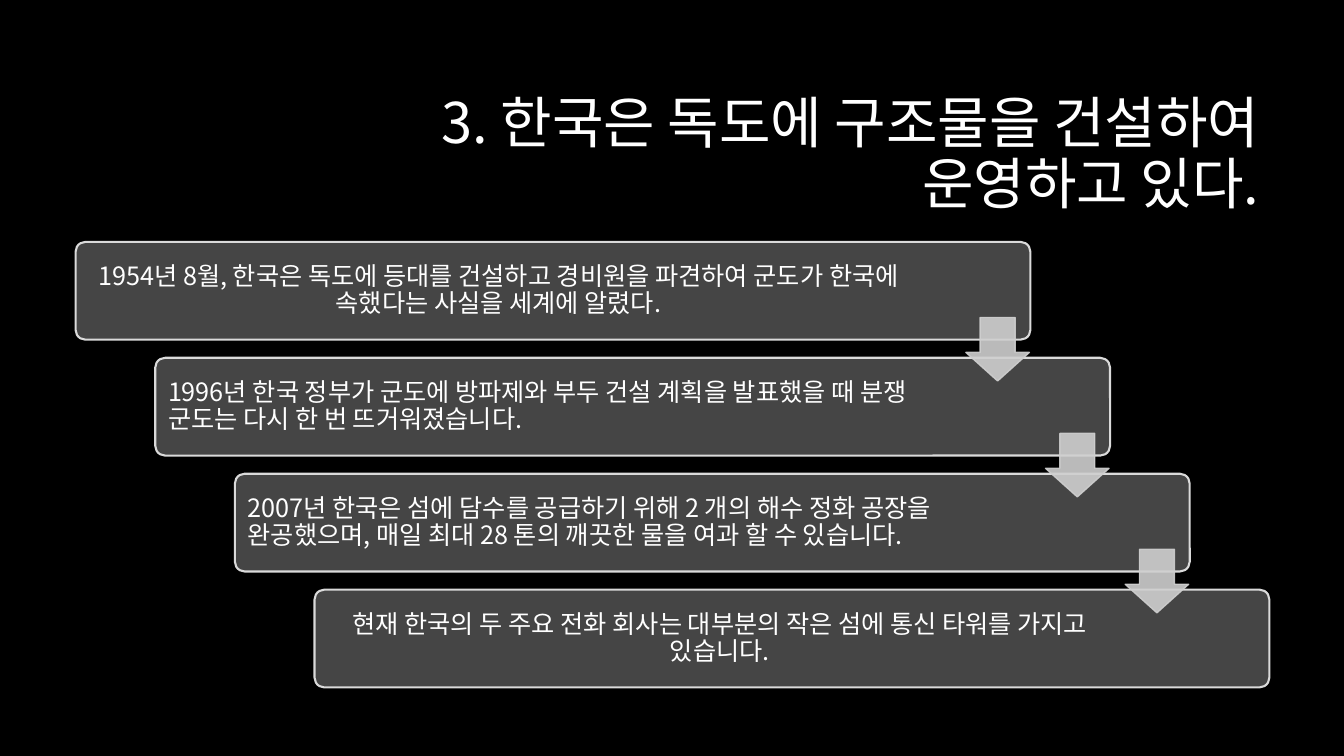
from dataclasses import dataclass

from lxml.etree import SubElement
from pptx import Presentation
from pptx.dml.color import RGBColor
from pptx.enum.shapes import MSO_SHAPE
from pptx.enum.text import MSO_ANCHOR, MSO_AUTO_SIZE, PP_ALIGN
from pptx.oxml.ns import qn
from pptx.shapes.autoshape import Shape
from pptx.slide import Slide
from pptx.util import Inches, Pt

FONT = "Noto Sans CJK KR"
FIRST_LEFT, FIRST_TOP = 0.75, 2.4
STEP_RIGHT, STEP_DOWN = 0.79, 1.15
CARD_WIDTH, CARD_HEIGHT = 9.47, 0.97
CARD_PADDING = 0.1
ARROW_SIZE = 0.63
ARROW_RIGHT, ARROW_DOWN = 8.83, 0.75


@dataclass(frozen=True)
class Event:
    text: str
    text_width: float
    align: PP_ALIGN


EVENTS = [
    Event("1954년 8월, 한국은 독도에 등대를 건설하고 경비원을 파견하여 군도가 한국에 속했다는 사실을 세계에 알렸다.",
          8.33, PP_ALIGN.CENTER),
    Event("1996년 한국 정부가 군도에 방파제와 부두 건설 계획을 발표했을 때 분쟁 군도는 다시 한 번 뜨거워졌습니다.",
          7.98, PP_ALIGN.LEFT),
    Event("2007년 한국은 섬에 담수를 공급하기 위해 2 개의 해수 정화 공장을 완공했으며, "
          "매일 최대 28 톤의 깨끗한 물을 여과 할 수 있습니다.",
          8.0, PP_ALIGN.LEFT),
    Event("현재 한국의 두 주요 전화 회사는 대부분의 작은 섬에 통신 타워를 가지고 있습니다.",
          7.98, PP_ALIGN.CENTER),
]


def color(value: str) -> RGBColor:
    return RGBColor.from_string(value)


def write(shape: Shape, text: str, size: float, align: PP_ALIGN, frame_format: dict) -> None:
    frame = shape.text_frame
    frame.text = text
    common = {"word_wrap": True, "auto_size": MSO_AUTO_SIZE.NONE,
              "vertical_anchor": MSO_ANCHOR.MIDDLE}
    for name, value in (common | frame_format).items():
        setattr(frame, name, value)
    paragraph = frame.paragraphs[0]
    for name, value in {"alignment": align, "line_spacing": 0.9}.items():
        setattr(paragraph, name, value)
    font = paragraph.runs[0].font
    for name, value in {"name": FONT, "size": Pt(size)}.items():
        setattr(font, name, value)
    font.color.rgb = color("FFFFFF")
    SubElement(font._element, qn("a:ea")).set("typeface", FONT)


def add_panel(slide: Slide, kind: MSO_SHAPE, left: float, top: float, width: float, height: float,
              adjustments: list[float], fill: str, line: str, line_width: float) -> Shape:
    panel = slide.shapes.add_shape(kind, Inches(left), Inches(top), Inches(width), Inches(height))
    panel.shadow.inherit = False
    for index, value in enumerate(adjustments):
        panel.adjustments[index] = value
    panel.fill.solid()
    panel.fill.fore_color.rgb = color(fill)
    panel.line.color.rgb = color(line)
    panel.line.width = Pt(line_width)
    return panel


def add_event(slide: Slide, event: Event, step: int) -> None:
    card = add_panel(slide, MSO_SHAPE.ROUNDED_RECTANGLE,
                     FIRST_LEFT + step * STEP_RIGHT, FIRST_TOP + step * STEP_DOWN,
                     CARD_WIDTH, CARD_HEIGHT, [0.1], "454545", "DADADA", 1.5)
    write(card, event.text, 18, event.align, {
        "margin_left": Inches(CARD_PADDING),
        "margin_right": Inches(CARD_WIDTH - event.text_width + 0.04),
        "margin_top": Inches(CARD_PADDING),
        "margin_bottom": Inches(CARD_PADDING),
    })


def add_arrow(slide: Slide, step: int) -> None:
    arrow = add_panel(slide, MSO_SHAPE.DOWN_ARROW,
                      FIRST_LEFT + step * STEP_RIGHT + ARROW_RIGHT,
                      FIRST_TOP + step * STEP_DOWN + ARROW_DOWN,
                      ARROW_SIZE, ARROW_SIZE, [0.55, 0.45], "CFCFCF", "CFCFCF", 1)
    for tint in arrow._element.spPr.iter(qn("a:srgbClr")):
        SubElement(tint, qn("a:alpha")).set("val", "90000")


def main() -> None:
    deck = Presentation()
    deck.slide_width, deck.slide_height = Inches(13.33), Inches(7.5)
    slide = deck.slides.add_slide(deck.slide_layouts[5])
    slide.background.fill.solid()
    slide.background.fill.fore_color.rgb = color("000000")

    title = slide.shapes.title
    place = {"left": 3.17, "top": 0.84, "width": 9.42, "height": 1.41}
    for name, value in place.items():
        setattr(title, name, Inches(value))
    write(title, "3. 한국은 독도에 구조물을 건설하여 운영하고 있다.", 40, PP_ALIGN.RIGHT, {})

    for step, event in enumerate(EVENTS):
        add_event(slide, event, step)
    for step in range(len(EVENTS) - 1):
        add_arrow(slide, step)
    deck.save("out.pptx")


if __name__ == "__main__":
    main()
